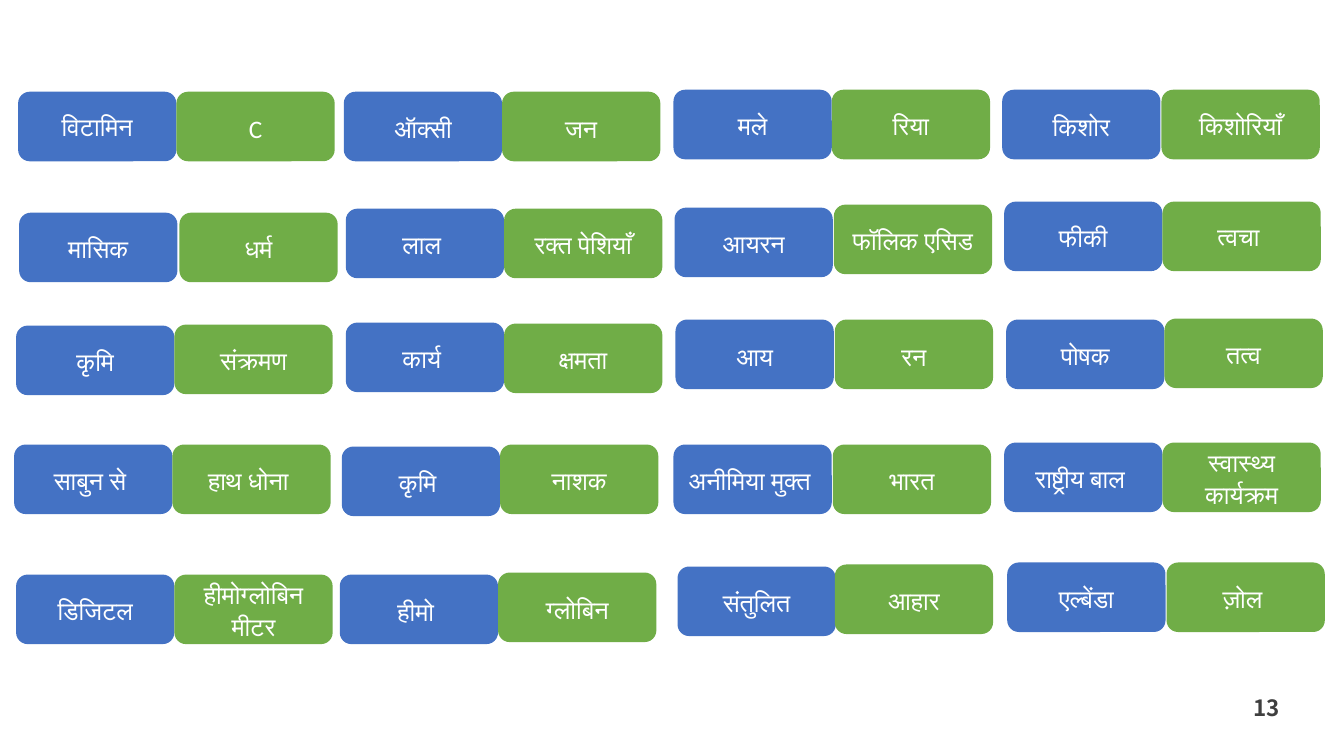
import pptx
import pptx.util
import pptx.dml.color
import pptx.enum.shapes
import pptx.enum.text

Inches = pptx.util.Inches
Pt = pptx.util.Pt
ALIGN = pptx.enum.text.PP_ALIGN
ANCHOR = pptx.enum.text.MSO_ANCHOR

COLORS = {"first": "4472C4", "second": "70AD47", "word": "FFFFFF", "number": "3F3F3F"}
CARD_W, CARD_H = 1.57, 0.69

# Word pairs by row: (first left, top, word), (second left, top, word)
PAIRS = [
    ((0.18, 0.91, "विटामिन"), (1.75, 0.91, "C")),
    ((3.41, 0.91, "ऑक्सी"), (4.98, 0.91, "जन")),
    ((6.68, 0.89, "मले"), (8.25, 0.89, "रिया")),
    ((9.94, 0.89, "किशोर"), (11.52, 0.89, "किशोरियाँ")),

    ((0.19, 2.11, "मासिक"), (1.78, 2.11, "धर्म")),
    ((3.43, 2.07, "लाल "), (5.0, 2.07, "रक्त पेशियाँ")),
    ((6.69, 2.06, "आयरन"), (8.27, 2.03, "फॉलिक एसिड")),
    ((9.96, 2.0, "फीकी"), (11.53, 2.0, "त्वचा ")),

    ((0.16, 3.23, "कृमि"), (1.73, 3.22, "संक्रमण")),
    ((3.43, 3.2, "कार्य "), (5.0, 3.21, "क्षमता")),
    ((6.7, 3.17, "आय"), (8.28, 3.17, "रन")),
    ((9.98, 3.17, "पोषक"), (11.55, 3.16, "तत्व")),

    ((0.14, 4.41, "साबुन से "), (1.71, 4.41, "हाथ धोना ")),
    ((3.39, 4.43, "कृमि "), (4.96, 4.41, "नाशक")),
    ((6.68, 4.41, "अनीमिया मुक्त "), (8.26, 4.41, "भारत")),
    ((9.96, 4.39, "राष्ट्रीय बाल "), (11.53, 4.39, "स्वास्थ्य कार्यक्रम")),

    ((0.16, 5.7, "डिजिटल"), (1.73, 5.7, "हीमोग्लोबिन मीटर")),
    ((3.37, 5.7, "हीमो "), (4.94, 5.68, "ग्लोबिन")),
    ((6.72, 5.62, "संतुलित"), (8.28, 5.6, "आहार")),
    ((9.99, 5.58, "एल्बेंडा"), (11.57, 5.58, "ज़ोल ")),
]

# Words set apart from the usual 1.07 line spacing and Calibri
SPACING = dict.fromkeys(
    ["C", "ऑक्सी", "जन", "किशोर", "आय", "रन", "हीमो ", "ग्लोबिन"], 1.15)
SPACING.update({"विटामिन": 1.0, "त्वचा ": 1.0})
FONTS = dict.fromkeys(["साबुन से ", "हाथ धोना "], "Times New Roman")


class Deck:
    def __init__(self):
        self.prs = pptx.Presentation()
        self.prs.slide_width = Inches(13.33)
        self.prs.slide_height = Inches(7.5)
        self.slide = self.prs.slides.add_slide(self.prs.slide_layouts[6])

    def color(self, name):
        return pptx.dml.color.RGBColor.from_string(COLORS[name])

    def add_text(self, tf, text, size, font, color, align, bold=False):
        tf.word_wrap = True
        p = tf.paragraphs[0]
        p.alignment = align
        r = p.add_run()
        r.text = text
        r.font.size = Pt(size)
        r.font.name = font
        r.font.bold = bold
        r.font.color.rgb = self.color(color)
        return p

    def card(self, left, top, word, fill):
        sp = self.slide.shapes.add_shape(
            pptx.enum.shapes.MSO_SHAPE.ROUNDED_RECTANGLE,
            Inches(left), Inches(top), Inches(CARD_W), Inches(CARD_H))
        sp.shadow.inherit = False
        sp.fill.solid()
        sp.fill.fore_color.rgb = self.color(fill)
        sp.line.fill.background()
        tf = sp.text_frame
        tf.vertical_anchor = ANCHOR.MIDDLE
        p = self.add_text(tf, word, 18, FONTS.get(word, "Calibri"), "word", ALIGN.CENTER)
        p.line_spacing = SPACING.get(word, 1.07)

    def page_number(self, text):
        sp = self.slide.shapes.add_textbox(
            Inches(11.5), Inches(6.75), Inches(1.31), Inches(0.5))
        tf = sp.text_frame
        tf.vertical_anchor = ANCHOR.BOTTOM
        tf.margin_left = tf.margin_right = tf.margin_top = Inches(0.12)
        tf.margin_bottom = Inches(0.1)
        self.add_text(tf, text, 16, "Noto Sans CJK JP", "number", ALIGN.RIGHT, bold=True)


def main():
    deck = Deck()
    # First halves lie behind second halves
    for fill, cards in zip(("first", "second"), zip(*PAIRS)):
        for left, top, word in cards:
            deck.card(left, top, word, fill)
    deck.page_number("13")
    deck.prs.save("out.pptx")


if __name__ == "__main__":
    main()
